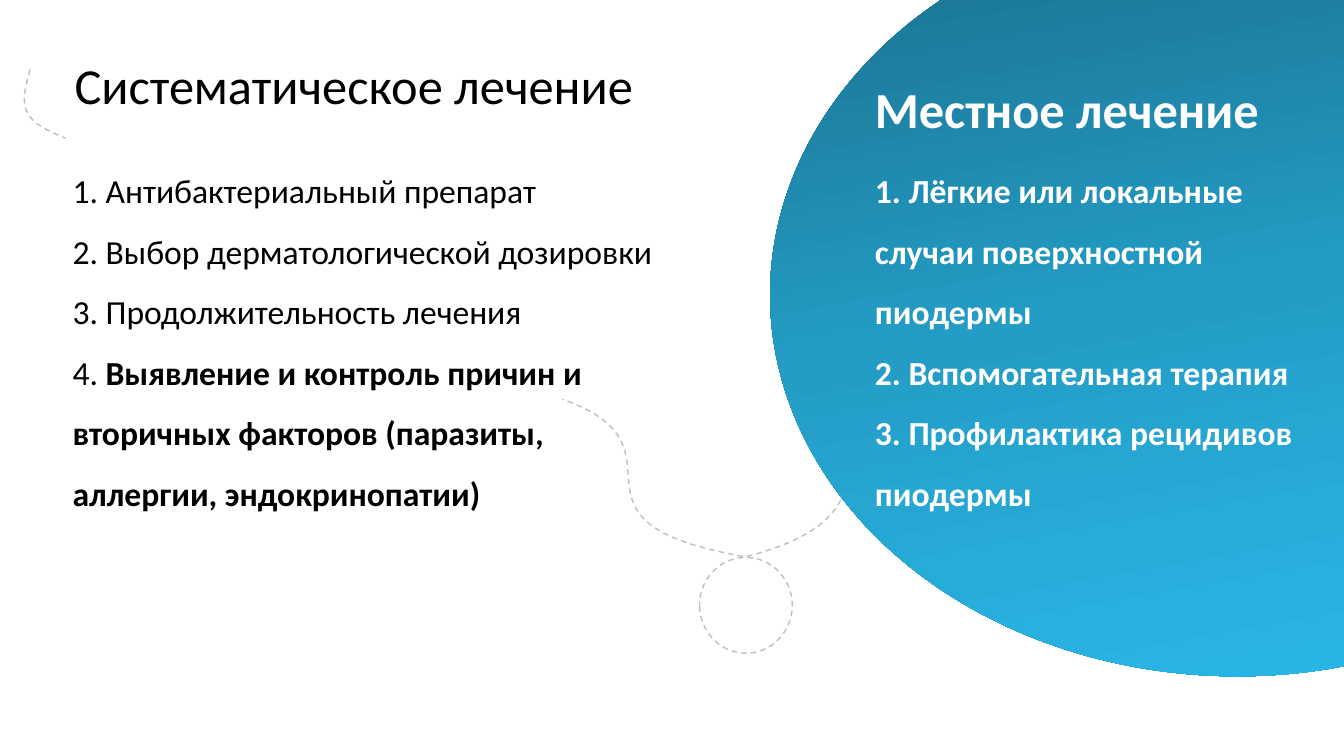
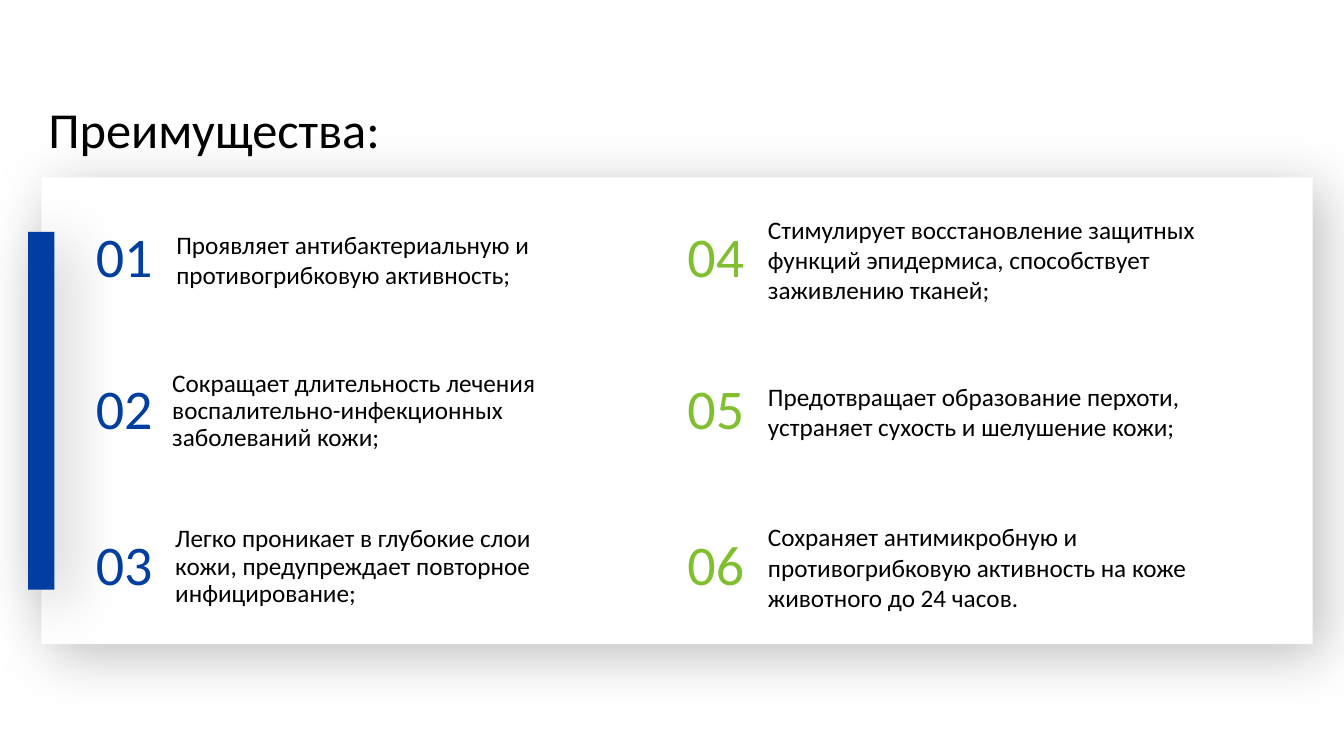
"""Build two slides on treatment and its benefits, laid out in percent of the slide size."""
from dataclasses import dataclass

from lxml import etree
from copy import deepcopy
from pptx import Presentation
from pptx.dml.color import RGBColor as Rgb
from pptx.enum.dml import MSO_LINE as Dash
from pptx.enum.shapes import MSO_SHAPE as Kind
from pptx.enum.text import MSO_ANCHOR as Anchor, MSO_AUTO_SIZE as Fit, PP_ALIGN as Align
from pptx.oxml.ns import qn
from pptx.util import Inches, Pt


@dataclass(frozen=True)
class Theme:
    font: str = "Calibri"
    ink: str = "000000"
    white: str = "FFFFFF"
    blue: str = "003EA1"
    green: str = "80BF2E"
    rule: str = "BFBFBF"
    blend: tuple = ("196E8B", "249DC6", "2ABAEB")
    head: int = 36
    list: int = 24
    mark: int = 40
    note: int = 18


look = Theme()
deck = Presentation()
deck.slide_width, deck.slide_height = Inches(13.33), Inches(7.5)
wide, high = deck.slide_width / 100, deck.slide_height / 100


def area(left, top, width, height):
    return [round(n * unit) for n, unit in zip((left, top, width, height), (wide, high) * 2)]


def write(shape, place, paras, size, color, bold=False, space=1.0,
          align=Align.LEFT, anchor=Anchor.TOP):
    shape.left, shape.top, shape.width, shape.height = area(*place)
    frame = shape.text_frame
    frame.word_wrap, frame.auto_size, frame.vertical_anchor = True, Fit.NONE, anchor
    for i, runs in enumerate(paras):
        para = frame.add_paragraph() if i else frame.paragraphs[0]
        para.alignment, para.line_spacing = align, space
        para.space_before = Pt(0)
        if shape.is_placeholder:
            props = para._p.get_or_add_pPr()
            props.set("marL", "0")
            props.set("indent", "0")
            etree.SubElement(props, qn("a:buNone"))
        for text, strong in runs:
            run = para.add_run()
            run.text = text
            font = run.font
            font.name, font.size, font.bold = look.font, Pt(size), bold or strong
            font.color.rgb = Rgb.from_string(color)


slide = deck.slides.add_slide(deck.slide_layouts[3])
shapes = slide.shapes
holders = list(slide.placeholders)
title, left, right = holders

curves = [
    ((55.58, 73.6), (68.85, 67.6), (58.28, 54.8), (68.55, 57.6)),
    ((55.28, 73.6), (40.35, 68.93), (52.05, 59.33), (41.85, 52.8)),
    ((2.25, 9.2), (1.5, 13.87), (1.35, 15.87), (4.88, 18.27)),
]
steps = 32
trails = []
for curve in curves:
    dots = []
    for t in (n / steps for n in range(steps + 1)):
        parts = ((1 - t) ** 3, 3 * t * (1 - t) ** 2, 3 * t * t * (1 - t), t ** 3)
        x, y = (sum(k * p[axis] for k, p in zip(parts, curve)) for axis in (0, 1))
        dots.append((round(x * wide), round(y * high)))
    pen = shapes.build_freeform(*dots[0])
    pen.add_line_segments(dots[1:], close=False)
    trails.append(pen.convert_to_shape())

ring = shapes.add_shape(Kind.OVAL, *area(52.05, 73.73, 6.9, 12.67))
ring.rotation = -2.7
for trail in (*trails, ring):
    trail.shadow.inherit = False
    trail.fill.background()
    trail.line.color.rgb = Rgb.from_string(look.rule)
    trail.line.width, trail.line.dash_style = Pt(1), Dash.DASH

disc = shapes.add_shape(Kind.OVAL, *area(57.3, -11.47, 69.53, 100.93))
disc.shadow.inherit = False
disc.line.fill.background()
disc.fill.gradient()
disc.fill.gradient_angle = 280
first = next(disc.element.iter(qn("a:gs")))
first.addnext(deepcopy(first))
for i, (stop, color) in enumerate(zip(disc.fill.gradient_stops, look.blend)):
    stop.position, stop.color.rgb = i / 2, Rgb.from_string(color)

for holder in holders:
    holder.element.getparent().append(holder.element)
write(title, (4.8, 6.53, 46.5, 9.47), [[("Систематическое лечение", False)]],
      look.head, look.ink)
write(left, (4.65, 19.2, 46.7, 54.27), [
    [("1. Антибактериальный препарат", False)],
    [("2. Выбор дерматологической дозировки", False)],
    [("3. Продолжительность лечения", False)],
    [("4. ", False),
     ("Выявление и контроль причин и вторичных факторов "
      "(паразиты, аллергии, эндокринопатии)", True)],
], look.list, look.ink, space=1.5)
write(right, (64.35, 19.2, 33, 49.87), [
    [("1. Лёгкие или локальные случаи поверхностной пиодермы", True)],
    [("2. Вспомогательная терапия", True)],
    [("3. Профилактика рецидивов пиодермы", True)],
], look.list, look.white, space=1.5)
spot = (64.35, 9.73, 33, 9.47)
write(shapes.add_textbox(*area(*spot)), spot, [[("Местное лечение", True)]],
      look.head, look.white)

slide = deck.slides.add_slide(deck.slide_layouts[5])
shapes = slide.shapes
title = shapes.title
plates = [
    ((3.08, 23.47, 94.58, 61.73), look.white),
    ((2.1, 30.67, 1.95, 47.33), look.blue),
]
for place, color in plates:
    plate = shapes.add_shape(Kind.RECTANGLE, *area(*place))
    plate.fill.solid()
    plate.fill.fore_color.rgb = Rgb.from_string(color)
    plate.line.fill.background()
    plate.shadow.inherit = False
    glow = etree.SubElement(
        plate.element.spPr.find(qn("a:effectLst")), qn("a:outerShdw"),
        blurRad=str(Pt(42)), dist=str(Pt(11)), dir=str(45 * 60000),
        algn="tl", rotWithShape="0")
    tint = etree.SubElement(glow, qn("a:srgbClr"), val=look.ink)
    etree.SubElement(tint, qn("a:alpha"), val="25000")

title.element.getparent().append(title.element)
write(title, (2.85, 12.27, 55.5, 9.47), [[("Преимущества:", False)]],
      look.head, look.ink)

rows = (34.33, 54.4, 75)
tall = 14
groups = [
    (5.74, 31, look.blue, [
        (12.38, 1.0, "Проявляет антибактериальную и противогрибковую активность;"),
        (12.08, 0.9, "Сокращает длительность лечения воспалительно-инфекционных "
                     "заболеваний кожи;"),
        (12.3, 0.9, "Легко проникает в глубокие слои кожи, предупреждает повторное "
                    "инфицирование;"),
    ]),
    (49.76, 36, look.green, [
        (56.4, 1.0, "Стимулирует восстановление защитных функций эпидермиса, "
                    "способствует заживлению тканей;"),
        (56.4, 1.0, "Предотвращает образование перхоти, устраняет сухость "
                    "и шелушение кожи;"),
        (56.4, 1.0, "Сохраняет антимикробную и противогрибковую активность на коже "
                    "животного до 24 часов."),
    ]),
]
count = 0
for edge, span, color, notes in groups:
    for mid, (start, space, text) in zip(rows, notes):
        count += 1
        top = mid - tall / 2
        spot = (edge, top, 7, tall)
        write(shapes.add_textbox(*area(*spot)), spot, [[(f"{count:02}", False)]],
              look.mark, color, space=0.9, align=Align.CENTER, anchor=Anchor.MIDDLE)
        spot = (start, top, span, tall)
        write(shapes.add_textbox(*area(*spot)), spot, [[(text, False)]],
              look.note, look.ink, space=space, anchor=Anchor.MIDDLE)

deck.save("out.pptx")
